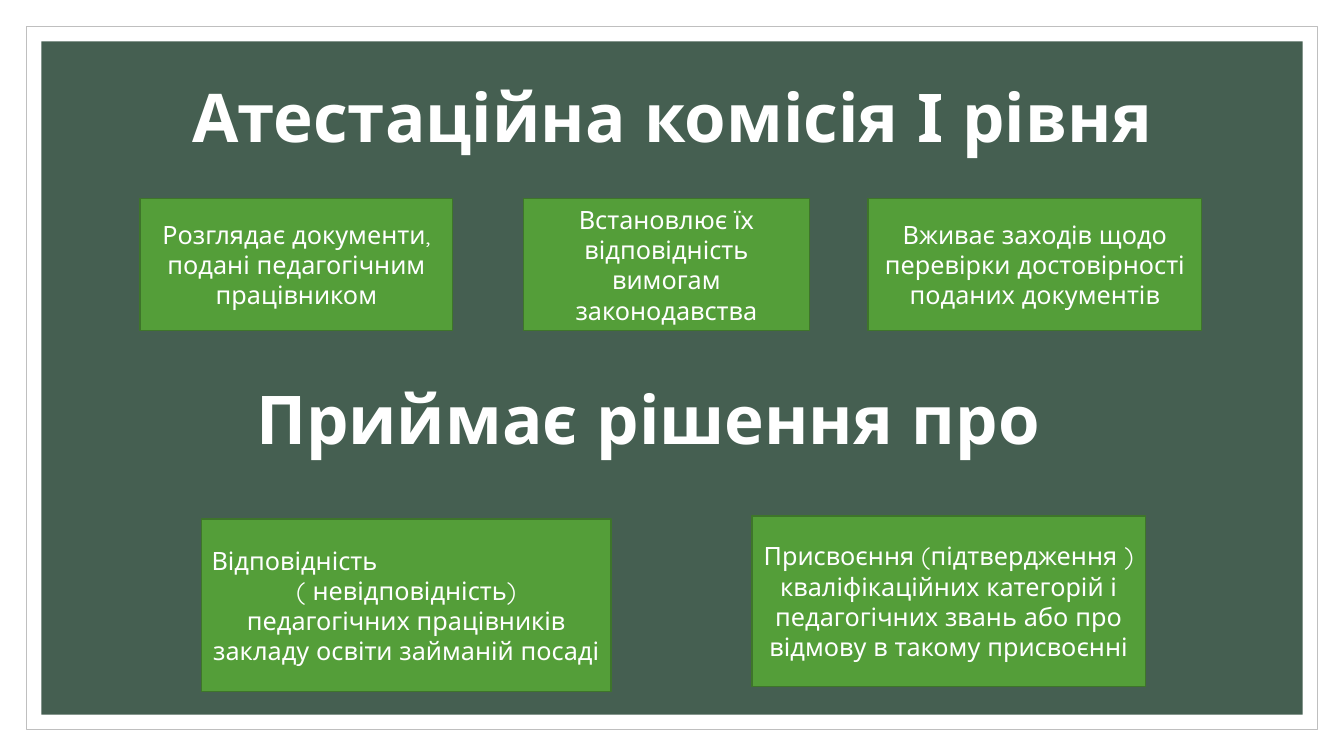
"""Build a slide on the duties and decisions of a first-level attestation board."""
from pptx import Presentation, util as u
from pptx.dml.color import RGBColor
from pptx.enum import shapes, text

WIDE, HIGH = u.Inches(13.33), u.Inches(7.5)
HUE = {"white": "FFFFFF", "grey": "BFBFBF", "dark": "455F51",
       "green": "549E39", "edge": "3E752A"}
LEFT, MID = text.PP_ALIGN.LEFT, text.PP_ALIGN.CENTER

# Places are percent of the slide: left, top, width, height.
FRAMES = [(1.95, 3.47, "white", "grey"), (3.08, 5.47, "dark", None)]
HEADS = [("Атестаційна комісія І рівня", (8.78, 9.33, 82.52, 13.33)),
         ("Приймає рішення про", (6.98, 49.2, 82.52, 13.33))]
DUTIES = [("Розглядає документи, подані педагогічним працівником", 10.43, 23.26),
          ("Встановлює їх відповідність вимогам законодавства", 38.93, 21.31),
          ("Вживає заходів щодо перевірки достовірності поданих документів",
           64.59, 24.83)]
DUTY_TOP, DUTY_HIGH = 26.27, 17.47
RULINGS = [([("Присвоєння (підтвердження ) кваліфікаційних категорій і педагогічних "
              "звань або про відмову в такому присвоєнні", MID)],
            (55.96, 68.27, 29.26, 22.53)),
           ([("Відповідність", LEFT),
             ("( невідповідність) педагогічних працівників закладу освіти "
              "займаній посаді", MID)],
            (15, 68.67, 30.46, 22.8))]
HEAD = {"size": u.Pt(48), "bold": True, "name": "Quicksand"}
BODY = {"size": u.Pt(18), "bold": False, "name": "Quicksand"}
BLOCK = {"word_wrap": True, "auto_size": text.MSO_AUTO_SIZE.NONE,
         "vertical_anchor": text.MSO_ANCHOR.MIDDLE}


def apply(item, form):
    for key, value in form.items():
        setattr(item, key, value)


def scale(place):
    return [round(part * side / 100) for part, side in zip(place, (WIDE, HIGH) * 2)]


def write(shape, lines, font, pitch=None):
    frame = shape.text_frame
    apply(frame, BLOCK)
    for i, (words, align) in enumerate(lines):
        para = frame.add_paragraph() if i else frame.paragraphs[0]
        apply(para, {"alignment": align, "line_spacing": pitch})
        run = para.add_run()
        run.text = words
        apply(run.font, font)
        run.font.color.rgb = RGBColor.from_string(HUE["white"])


def panel(slide, place, fill, edge, weight):
    shape = slide.shapes.add_shape(shapes.MSO_SHAPE.RECTANGLE, *scale(place))
    shape.shadow.inherit = False
    shape.fill.solid()
    shape.fill.fore_color.rgb = RGBColor.from_string(HUE[fill])
    if edge:
        shape.line.color.rgb = RGBColor.from_string(HUE[edge])
        shape.line.width = u.Pt(weight)
    else:
        shape.line.fill.background()
    return shape


def main():
    deck = Presentation()
    apply(deck, {"slide_width": WIDE, "slide_height": HIGH})
    slide = deck.slides.add_slide(deck.slide_layouts[5])
    for x, y, fill, edge in FRAMES:
        panel(slide, (x, y, 100 - 2 * x, 100 - 2 * y), fill, edge, 0.5)

    title = slide.shapes.title
    slide.shapes._spTree.append(title._element)
    label = slide.shapes.add_textbox(0, 0, 0, 0)
    for shape, (words, place) in zip((title, label), HEADS):
        apply(shape, dict(zip(("left", "top", "width", "height"), scale(place))))
        write(shape, [(words, MID)], HEAD, 0.9)

    cards = [([(words, MID)], (x, DUTY_TOP, wide, DUTY_HIGH))
             for words, x, wide in DUTIES] + RULINGS
    for lines, place in cards:
        write(panel(slide, place, "green", "edge", 1), lines, BODY)
    deck.save("out.pptx")


if __name__ == "__main__":
    main()
